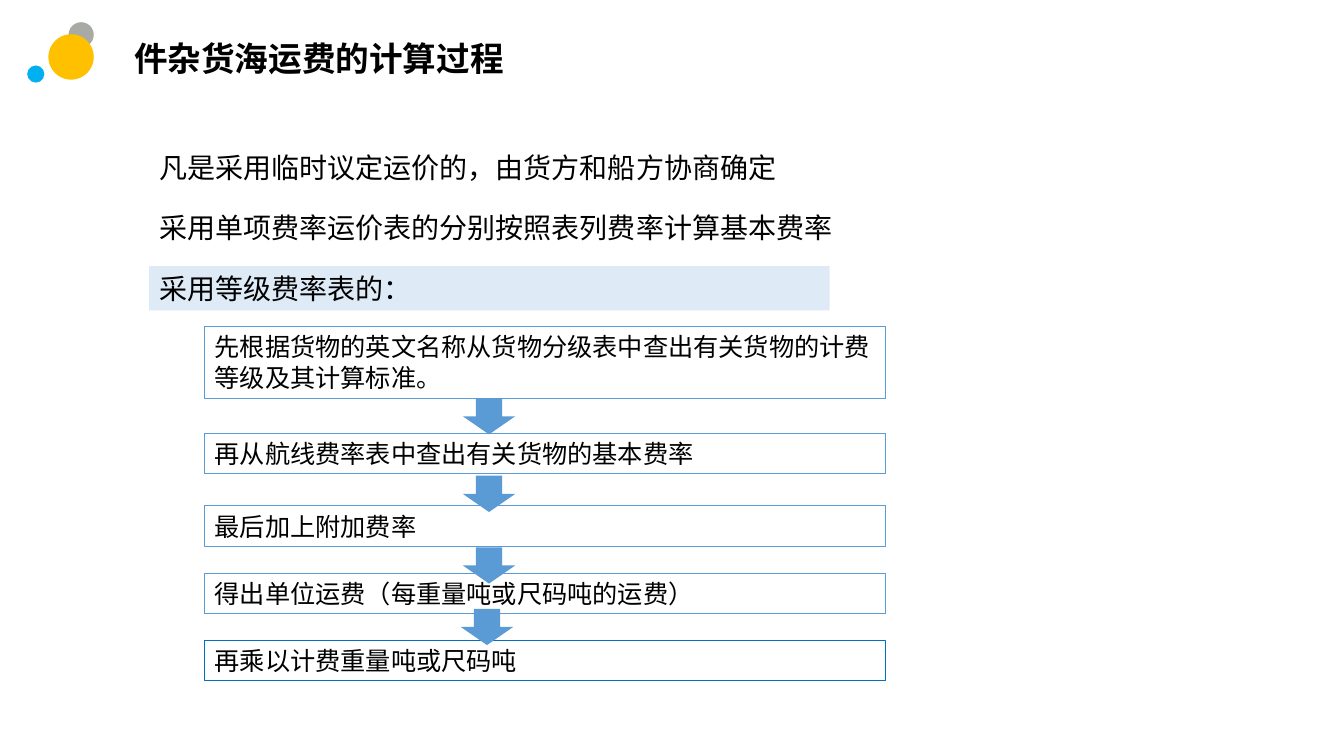
import pptx
import pptx.util
import pptx.dml.color
import pptx.enum.shapes
import pptx.enum.text
from dataclasses import dataclass

Inches = pptx.util.Inches
Kind = pptx.enum.shapes.MSO_SHAPE
Anchor = pptx.enum.text.MSO_ANCHOR


@dataclass(frozen=True)
class Theme:
    font: str = "Calibri"
    ink: str = "000000"
    blue: str = "5B9BD5"
    deep: str = "0070C0"
    pale: str = "DEEBF7"
    gray: str = "A8AAA5"
    gold: str = "FFC000"
    sky: str = "00B0F0"
    head: int = 24
    body: int = 20
    step: int = 18
    rule: float = 0.75


THEME = Theme()


def color(code):
    return pptx.dml.color.RGBColor.from_string(code)


def write(shape, text, size=THEME.body, bold=False, anchor=Anchor.TOP, space=1.0):
    frame = shape.text_frame
    frame.word_wrap = True
    frame.auto_size = pptx.enum.text.MSO_AUTO_SIZE.NONE
    frame.vertical_anchor = anchor
    para = frame.paragraphs[0]
    para.alignment = pptx.enum.text.PP_ALIGN.LEFT
    para.line_spacing = space
    run = para.add_run()
    run.text = text
    run.font.name = THEME.font
    run.font.size = pptx.util.Pt(size)
    run.font.bold = bold
    run.font.color.rgb = color(THEME.ink)


def draw(slide, kind, box, fill=None, line=None):
    shape = slide.shapes.add_shape(kind, *map(Inches, box))
    shape.shadow.inherit = False
    if fill:
        shape.fill.solid()
        shape.fill.fore_color.rgb = color(fill)
    else:
        shape.fill.background()
    if line:
        shape.line.color.rgb = color(line)
        shape.line.width = pptx.util.Pt(THEME.rule)
    else:
        shape.line.fill.background()
    return shape


def add_head(slide, box, text):
    title = slide.shapes.title
    title.left, title.top, title.width, title.height = map(Inches, box)
    write(title, text, size=THEME.head, bold=True, anchor=Anchor.MIDDLE, space=0.9)


def add_dots(slide, left, top):
    dots = [(0.41, 0, 0.25, THEME.gray), (0.21, 0.12, 0.45, THEME.gold),
            (0, 0.43, 0.17, THEME.sky)]
    for x, y, size, fill in dots:
        draw(slide, Kind.OVAL, (left + x, top + y, size, size), fill=fill)


def add_rules(slide, box, texts, pitch):
    left, top, width, height = box
    # Plain lines, the last one on a pale band
    for i, text in enumerate(texts):
        y = top + i * pitch
        if i == len(texts) - 1:
            shape = draw(slide, Kind.RECTANGLE, (left, y, width, height), fill=THEME.pale)
        else:
            shape = slide.shapes.add_textbox(*map(Inches, (left, y, width + 0.73, height)))
        write(shape, text)


def add_steps(slide, left, top, width, steps):
    # Framed steps: offset, height, frame colour, wording
    for y, height, line, text in steps:
        shape = draw(slide, Kind.RECTANGLE, (left, top + y, width, height), line=line)
        write(shape, text, size=THEME.step)
    # Arrows lie over the frames
    for x, y in [(2.56, 0.71), (2.56, 1.48), (2.56, 2.19), (2.54, 2.8)]:
        draw(slide, Kind.DOWN_ARROW, (left + x, top + y, 0.52, 0.36), fill=THEME.blue)


def main():
    deck = pptx.Presentation()
    deck.slide_width, deck.slide_height = Inches(13.33), Inches(7.5)
    slide = deck.slides.add_slide(deck.slide_layouts[5])

    # Header
    add_head(slide, (1.23, 0.34, 4.62, 0.53), "件杂货海运费的计算过程")
    add_dots(slide, 0.27, 0.22)

    # Cases
    add_rules(slide, (1.48, 1.44, 6.75, 0.44), [
        "凡是采用临时议定运价的，由货方和船方协商确定",
        "采用单项费率运价表的分别按照表列费率计算基本费率",
        "采用等级费率表的：",
    ], pitch=0.6)

    # Calculation steps
    add_steps(slide, 2.03, 3.24, 6.75, [
        (0, 0.71, THEME.blue, "先根据货物的英文名称从货物分级表中查出有关货物的计费等级及其计算标准。"),
        (1.06, 0.4, THEME.blue, "再从航线费率表中查出有关货物的基本费率"),
        (1.78, 0.4, THEME.blue, "最后加上附加费率"),
        (2.45, 0.4, THEME.blue, "得出单位运费（每重量吨或尺码吨的运费）"),
        (3.11, 0.4, THEME.deep, "再乘以计费重量吨或尺码吨"),
    ])

    deck.save("out.pptx")


if __name__ == "__main__":
    main()
